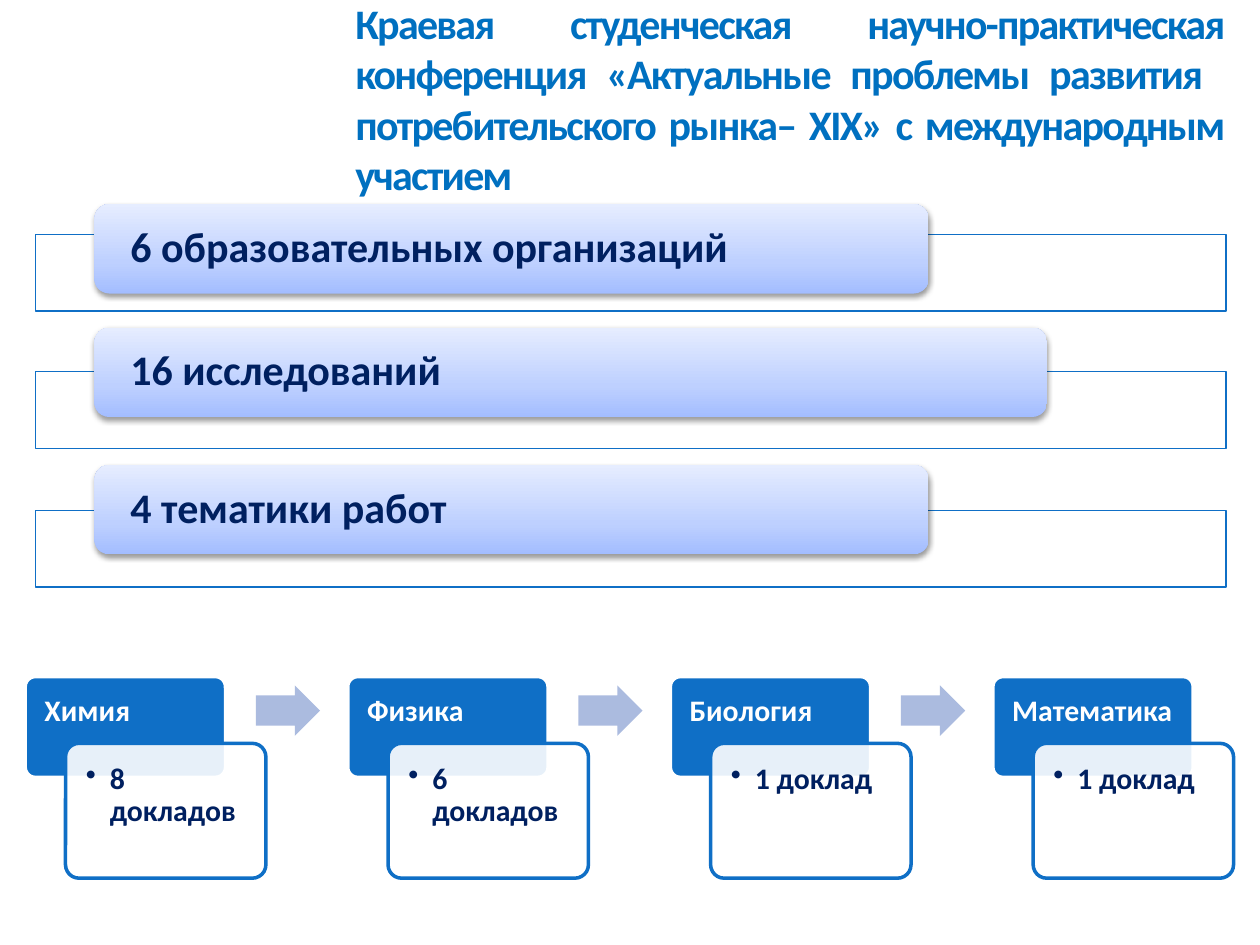
from dataclasses import dataclass

from pptx import Presentation
from pptx.dml.color import RGBColor
from pptx.enum.shapes import MSO_SHAPE
from pptx.enum.text import MSO_ANCHOR, MSO_AUTO_SIZE, PP_ALIGN
from pptx.oxml import parse_xml
from pptx.oxml.ns import nsdecls, qn
from pptx.oxml.xmlchemy import OxmlElement
from pptx.shapes.autoshape import Shape
from pptx.slide import Slide
from pptx.text.text import _Paragraph
from pptx.util import Inches, Pt

COLORS = {
    "title": "0070C0",
    "blue": "0F6FC6",
    "navy": "002060",
    "white": "FFFFFF",
    "arrow": "ABBBDF",
    "shadow": "000000",
}
BAR_GRADIENT = {0: "A3BDFF", 35: "BED0FF", 100: "E6EDFF"}
FONT = "Calibri"


@dataclass
class Bar:
    text: str
    bar_top: float
    frame_top: float
    width: float


@dataclass
class Subject:
    name: str
    reports: str


BARS = [
    Bar("6 образовательных организаций", 1.62, 1.86, 6.62),
    Bar("16 исследований", 2.6, 2.95, 7.56),
    Bar("4 тематики работ", 3.69, 4.05, 6.62),
]
SUBJECTS = [
    Subject("Химия", "8 докладов"),
    Subject("Физика", "6 докладов"),
    Subject("Биология", "1 доклад"),
    Subject("Математика", "1 доклад"),
]
SUBJECT_STEP = 2.56


def add_span(para: _Paragraph, text: str, size: float, color: str) -> None:
    span = para.add_run()
    span.text = text
    span.font.name = FONT
    span.font.size = Pt(size)
    span.font.bold = True
    span.font.color.rgb = RGBColor.from_string(COLORS[color])


def add_box(page: Slide, kind: MSO_SHAPE, left: float, top: float, width: float, height: float,
            fill: str | None = None, line: str | None = None, line_width: float = 2) -> Shape:
    box = page.shapes.add_shape(kind, Inches(left), Inches(top), Inches(width), Inches(height))
    box.shadow.inherit = False
    if fill:
        box.fill.solid()
        box.fill.fore_color.rgb = RGBColor.from_string(COLORS[fill])
    if line:
        box.line.color.rgb = RGBColor.from_string(COLORS[line])
        box.line.width = Pt(line_width)
    else:
        box.line.fill.background()
    return box


def set_opacity(box: Shape, percent: int) -> None:
    alpha = OxmlElement("a:alpha")
    alpha.set("val", str(percent * 1000))
    box._element.spPr.find(qn("a:solidFill")).find(qn("a:srgbClr")).append(alpha)


def add_gradient_and_shadow(box: Shape) -> None:
    stops = "".join(
        f'<a:gs pos="{position * 1000}"><a:srgbClr val="{color}"/></a:gs>'
        for position, color in BAR_GRADIENT.items()
    )
    gradient = parse_xml(
        f'<a:gradFill {nsdecls("a")} rotWithShape="1"><a:gsLst>{stops}</a:gsLst>'
        '<a:lin ang="16200000" scaled="0"/></a:gradFill>'
    )
    properties = box._element.spPr
    properties.find(qn("a:ln")).addprevious(gradient)
    properties.find(qn("a:effectLst")).append(parse_xml(
        f'<a:outerShdw {nsdecls("a")} blurRad="{Pt(3.1)}" dist="{Pt(1.6)}" dir="5400000" '
        f'rotWithShape="0"><a:srgbClr val="{COLORS["shadow"]}"><a:alpha val="38000"/>'
        '</a:srgbClr></a:outerShdw>'
    ))


def start_text(box: Shape, anchor: MSO_ANCHOR, side: float, end: float) -> _Paragraph:
    frame = box.text_frame
    frame.word_wrap = True
    frame.vertical_anchor = anchor
    frame.margin_left = frame.margin_right = Inches(side)
    frame.margin_top = frame.margin_bottom = Inches(end)
    para = frame.paragraphs[0]
    para.alignment = PP_ALIGN.LEFT
    para.line_spacing = 0.9
    return para


def add_bullet(para: _Paragraph) -> None:
    properties = para._p.get_or_add_pPr()
    properties.set("marL", str(Inches(0.19)))
    properties.set("indent", str(-Inches(0.19)))
    bullet = OxmlElement("a:buChar")
    bullet.set("char", "•")
    properties.append(bullet)


def add_title(page: Slide) -> None:
    title = page.shapes.title
    title.left, title.top = Inches(2.72), Inches(0.05)
    title.width, title.height = Inches(7.09), Inches(1.46)
    frame = title.text_frame
    frame.word_wrap = True
    frame.auto_size = MSO_AUTO_SIZE.NONE
    frame.vertical_anchor = MSO_ANCHOR.MIDDLE
    para = frame.paragraphs[0]
    para.alignment = PP_ALIGN.JUSTIFY
    add_span(para, "Краевая студенческая научно-практическая конференция "
                   "«Актуальные проблемы развития ", 24, "title")
    para.add_line_break()
    add_span(para, "потребительского рынка– ХIX» с международным участием", 24, "title")
    for span in para.runs:
        span.font._element.set("spc", "-100")


def add_bar(page: Slide, bar: Bar) -> None:
    frame = add_box(page, MSO_SHAPE.RECTANGLE, 0.28, bar.frame_top, 9.45, 0.61,
                    "white", "blue", 0.75)
    set_opacity(frame, 90)
    box = add_box(page, MSO_SHAPE.ROUNDED_RECTANGLE, 0.75, bar.bar_top, bar.width, 0.71)
    add_gradient_and_shadow(box)
    add_span(start_text(box, MSO_ANCHOR.MIDDLE, 0.25, 0), bar.text, 24, "navy")


def add_subject(page: Slide, subject: Subject, left: float) -> None:
    header = add_box(page, MSO_SHAPE.ROUNDED_RECTANGLE, left, 5.37, 1.59, 0.8, "blue", "white")
    card = add_box(page, MSO_SHAPE.ROUNDED_RECTANGLE, left + 0.32, 5.9, 1.59, 1.07,
                   "white", "blue")
    set_opacity(card, 90)
    for box in (header, card):
        box.adjustments[0] = 0.1
    add_span(start_text(header, MSO_ANCHOR.TOP, 0.13, 0.13), subject.name, 17, "white")
    para = start_text(card, MSO_ANCHOR.TOP, 0.13, 0.13)
    add_bullet(para)
    add_span(para, subject.reports, 17, "navy")


def add_arrow(page: Slide, left: float) -> None:
    arrow = add_box(page, MSO_SHAPE.RIGHT_ARROW, left, 5.44, 0.51, 0.4, "arrow")
    arrow.adjustments[0] = 0.6
    arrow.adjustments[1] = 0.5


def main() -> None:
    deck = Presentation()
    deck.slide_width, deck.slide_height = Inches(10), Inches(7.5)
    page = deck.slides.add_slide(deck.slide_layouts[5])
    add_title(page)

    # Conference figures
    for bar in BARS:
        add_bar(page, bar)

    # Reports by subject, with arrows between neighbours
    for index, subject in enumerate(SUBJECTS):
        left = 0.2 + index * SUBJECT_STEP
        add_subject(page, subject, left)
        if index < len(SUBJECTS) - 1:
            add_arrow(page, left + 1.83)

    deck.save("out.pptx")


if __name__ == "__main__":
    main()
